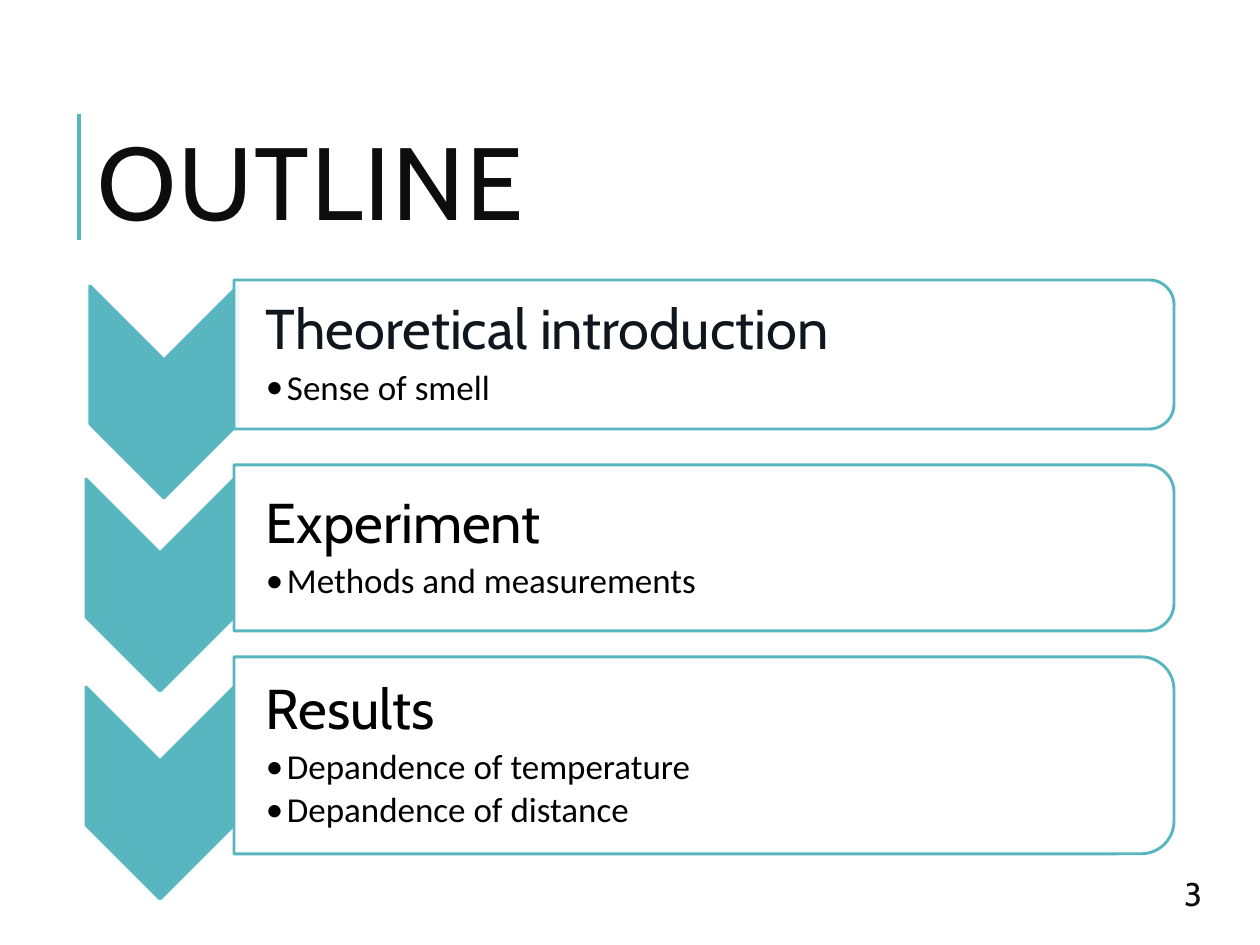
"""Build the outline slide: a title and three chevron rows with their topics."""
from lxml.etree import SubElement
from pptx import Presentation
from pptx.dml.color import RGBColor
from pptx.enum.shapes import MSO_CONNECTOR, MSO_SHAPE
from pptx.enum.text import MSO_ANCHOR
from pptx.oxml.ns import qn
from pptx.util import Emu, Pt

PX = 914400 / 168
COLORS = {"teal": "58B6C0", "white": "FFFFFF", "title": "0D0D0D",
          "navy": "0F161D", "black": "000000"}


def add_text(box, insets, anchor, lines):
    s = slide.shapes.add_textbox(*[Emu(round(v * PX)) for v in box])
    tf = s.text_frame
    tf.word_wrap = True
    tf.vertical_anchor = anchor
    tf.margin_left, tf.margin_top, tf.margin_right, tf.margin_bottom = [
        Emu(round(v * PX)) for v in insets]
    for i, (text, size, font, color) in enumerate(lines):
        p = tf.add_paragraph() if i else tf.paragraphs[0]
        p.text = text
        p.font.size = Pt(size)
        p.font.name = font
        p.font.color.rgb = RGBColor.from_string(COLORS[color])
    return tf


def add_rotated(shape, cx, cy, width, height, fill):
    box = (cx - width / 2, cy - height / 2, width, height)
    s = slide.shapes.add_shape(shape, *[Emu(round(v * PX)) for v in box])
    s.rotation = 90
    s.shadow.inherit = False
    s.fill.solid()
    s.fill.fore_color.rgb = RGBColor.from_string(COLORS[fill])
    s.line.color.rgb = RGBColor.from_string(COLORS["teal"])
    s.line.width = Pt(1.25)
    return s


prs = Presentation()
prs.slide_width, prs.slide_height = Emu(round(1260 * PX)), Emu(round(945 * PX))
slide = prs.slides.add_slide(prs.slide_layouts[6])

rule = slide.shapes.add_connector(
    MSO_CONNECTOR.STRAIGHT, *[Emu(round(v * PX)) for v in (79, 240, 79, 114)])
rule.line.color.rgb = RGBColor.from_string(COLORS["teal"])
rule.line.width = Pt(1.5)
SubElement(rule._element.spPr, qn("a:effectLst"))

tf = add_text((86, 130, 1174, 79), (12, 12, 12, 12), MSO_ANCHOR.TOP,
              [("OUTLINE", 44, "Cabin", "title")])
p = tf.paragraphs[0]
p.line_spacing = 0.8
p.runs[0].font._element.set("spc", "80")

BOX_LEFT, BOX_WIDTH = 234, 940
rows = [
    (164, 392, 280, 149, "Theoretical introduction", "navy", ["Sense of smell"]),
    (160, 585, 465, 166, "Experiment", "black", ["Methods and measurements"]),
    (160, 793, 657, 197, "Results", "black",
     ["Depandence of temperature", "Depandence of distance"]),
]
for chevron_x, chevron_y, top, height, heading, color, topics in rows:
    add_rotated(MSO_SHAPE.CHEVRON, chevron_x, chevron_y, 212, 148, "teal")

    panel = add_rotated(MSO_SHAPE.ROUND_2_SAME_RECTANGLE, BOX_LEFT + BOX_WIDTH / 2,
                        top + height / 2, height, BOX_WIDTH, "white")
    white = panel._element.spPr.find(qn("a:solidFill")).find(qn("a:srgbClr"))
    SubElement(white, qn("a:alpha"), val="90000")

    lines = [(heading, 24, "Cabin", color)]
    lines += [(topic, 15, "Calibri", "black") for topic in topics]
    tf = add_text((BOX_LEFT, top + 7, 931, height - 14), (32, 3, 3, 3),
                  MSO_ANCHOR.MIDDLE, lines)
    for p in tf.paragraphs:
        p.line_spacing = 0.9
        p.space_after = Pt(p.font.size.pt * 0.15)
    for p in tf.paragraphs[1:]:
        pPr = p._p.get_or_add_pPr()
        indent = round(21 * PX)
        pPr.set("marL", str(indent))
        pPr.set("indent", str(-indent))
        for tag, attrs in (("a:buFont", {"typeface": "Calibri"}),
                           ("a:buChar", {"char": "•"})):
            pPr.insert_element_before(pPr.makeelement(qn(tag), attrs),
                                      "a:tabLst", "a:defRPr", "a:extLst")

add_text((1167, 857, 76, 72), (17, 17, 17, 17), MSO_ANCHOR.MIDDLE,
         [("3", 14, "Cabin", "title")])

prs.save("out.pptx")
